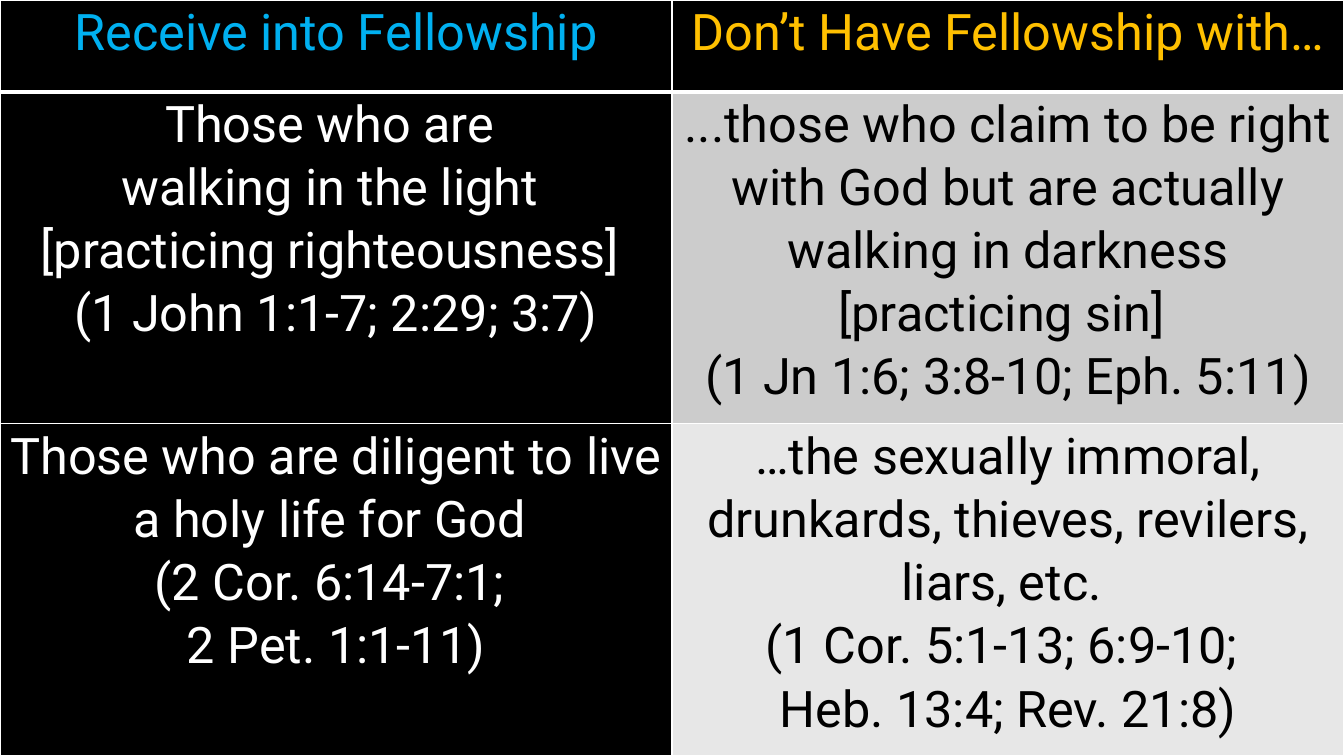
from lxml import etree
from pptx import Presentation
from pptx.dml.color import RGBColor
from pptx.enum.text import PP_ALIGN
from pptx.oxml.ns import qn
from pptx.util import Cm, Pt

CENTER = PP_ALIGN.CENTER
WIDE, HIGH = Cm(33.87), Cm(19.05)
HEAD = Cm(2.31)
BLACK, WHITE = "000000", "FFFFFF"

# Each cell: fill, text colour, paragraphs
ROWS = [
    [
        (BLACK, "00B0F0", ["Receive into Fellowship"]),
        (BLACK, "FFC000", ["Don’t Have Fellowship with…"]),
    ],
    [
        (BLACK, WHITE, [
            "Those who are ",
            "walking in the light ",
            "[practicing righteousness] ",
            "(1 John 1:1-7; 2:29; 3:7)",
        ]),
        ("CCCCCC", BLACK, [
            "...those who claim to be right with God but are actually "
            "walking in darkness [practicing sin] ",
            "(1 Jn 1:6; 3:8-10; Eph. 5:11)",
        ]),
    ],
    [
        (BLACK, WHITE, [
            "Those who are diligent to live a holy life for God ",
            "(2 Cor. 6:14-7:1; ",
            "2 Pet. 1:1-11)",
        ]),
        ("E7E7E7", BLACK, [
            "…the sexually immoral, drunkards, thieves, revilers, "
            "liars, etc. ",
            "(1 Cor. 5:1-13; 6:9-10; ",
            "Heb. 13:4; Rev. 21:8)",
        ]),
    ],
]


def paint(fill, color):
    fill.solid()
    fill.fore_color.rgb = RGBColor.from_string(color)


def write(frame, lines, color=WHITE, size=36, font="Roboto", space=1.07):
    """Fill a text frame with one centred paragraph per line."""
    for i, line in enumerate(lines):
        para = frame.add_paragraph() if i else frame.paragraphs[0]
        para.alignment = CENTER
        para.line_spacing = space
        run = para.add_run()
        run.text = line
        run.font.name = font
        run.font.size = Pt(size)
        run.font.color.rgb = RGBColor.from_string(color)


def edge(cell, **sides):
    """Draw white borders; sides L, R, T and B give widths in points."""
    props = cell._tc.get_or_add_tcPr()
    for i, side in enumerate("LRTB"):
        line = etree.Element(qn(f"a:ln{side}"), w=str(Pt(sides.get(side, 1))))
        fill = etree.SubElement(line, qn("a:solidFill"))
        etree.SubElement(fill, qn("a:srgbClr"), val=WHITE)
        props.insert(i, line)


def add_grid(slide, rows):
    count = len(rows[0])
    grid = slide.shapes.add_table(len(rows), count, 0, 0, WIDE, HIGH).table
    for col in grid.columns:
        col.width = WIDE // count
    for r, row in enumerate(rows):
        grid.rows[r].height = (HIGH - HEAD) // (len(rows) - 1) if r else HEAD
        for c, (back, color, lines) in enumerate(row):
            cell = grid.cell(r, c)
            cell.margin_left = cell.margin_right = Cm(0.18)
            cell.margin_top = cell.margin_bottom = 0
            paint(cell.fill, back)
            edge(cell, T=3 if r == 1 else 1, B=3 if r == 0 else 1)
            write(cell.text_frame, lines, color=color)


def main():
    deck = Presentation()
    deck.slide_width, deck.slide_height = WIDE, HIGH
    slide = deck.slides.add_slide(deck.slide_layouts[6])
    paint(slide.background.fill, BLACK)
    add_grid(slide, ROWS)
    deck.save("out.pptx")


if __name__ == "__main__":
    main()
